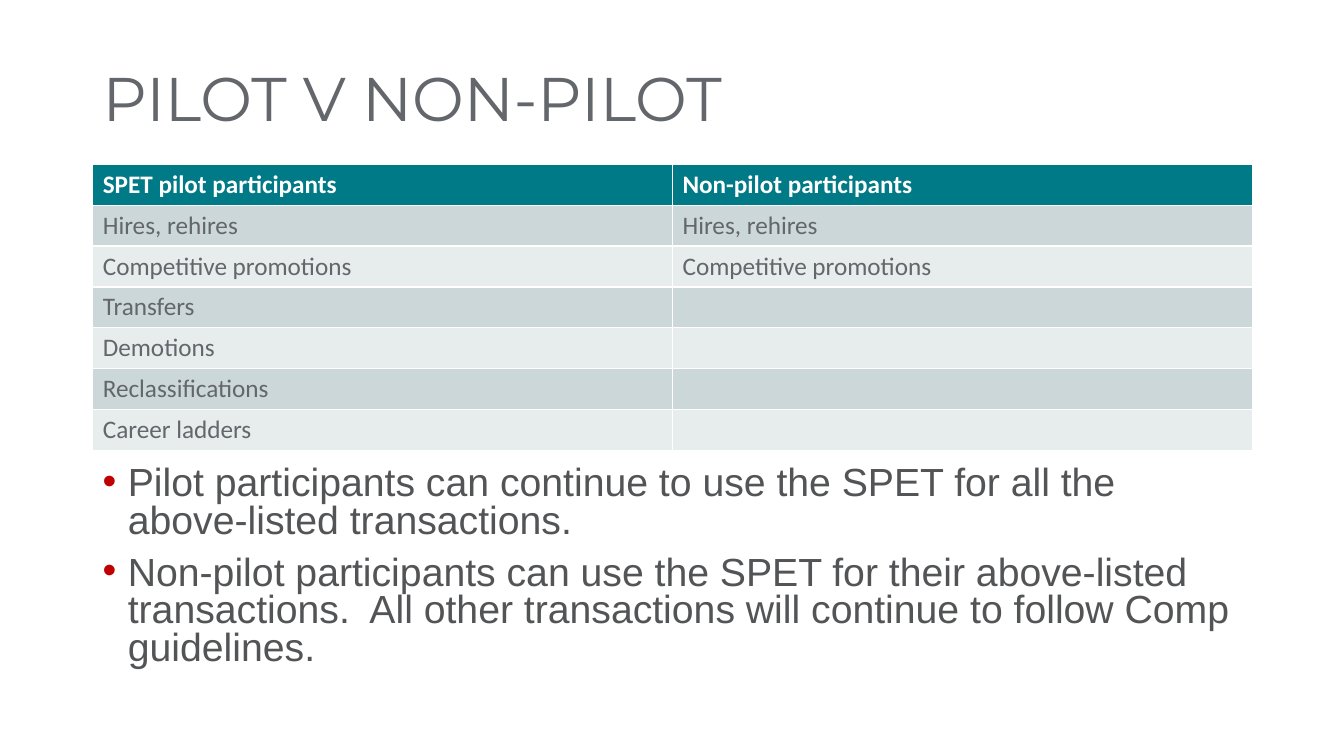
from lxml import etree
from pptx import Presentation
from pptx.dml.color import RGBColor
from pptx.enum.text import MSO_ANCHOR
from pptx.oxml.ns import qn
from pptx.util import Inches, Pt

MIDDLE = MSO_ANCHOR.MIDDLE
LEFT, WIDTH = Inches(0.92), Inches(11.5)
GREY = "63666A"


def paint(target, color):
    target.rgb = RGBColor.from_string(color)


def style(para, color, **form):
    for name, value in form.items():
        setattr(para.font, name, value)
    paint(para.font.color, color)


deck = Presentation()
deck.slide_width, deck.slide_height = Inches(13.33), Inches(7.5)
slide = deck.slides.add_slide(deck.slide_layouts[6])

title = slide.shapes.add_textbox(LEFT, Inches(0.38), WIDTH, Inches(1.25)).text_frame
title.word_wrap = True
title.vertical_anchor = MIDDLE
head = title.paragraphs[0]
head.text = "PILOT V NON-PILOT"
head.line_spacing = 0.9
style(head, GREY, name="Montserrat", size=Pt(44))

rows = [
    ("SPET pilot participants", "Non-pilot participants"),
    ("Hires, rehires", "Hires, rehires"),
    ("Competitive promotions", "Competitive promotions"),
    ("Transfers", ""),
    ("Demotions", ""),
    ("Reclassifications", ""),
    ("Career ladders", ""),
]
table = slide.shapes.add_table(len(rows), 2, LEFT, Inches(1.63), WIDTH, Inches(2.84)).table
for r, row in enumerate(rows):
    top = r == 0
    fill = "007A86" if top else ("E7ECED", "CCD7D9")[r % 2]
    for c, text in enumerate(row):
        cell = table.cell(r, c)
        cell.fill.solid()
        paint(cell.fill.fore_color, fill)
        para = cell.text_frame.paragraphs[0]
        para.text = text
        style(para, "FFFFFF" if top else GREY, name="Calibri", size=Pt(18), bold=top)

notes = [
    "Pilot participants can continue to use the SPET for all the above-listed transactions.",
    "Non-pilot participants can use the SPET for their above-listed transactions.  "
    "All other transactions will continue to follow Comp guidelines.",
]
body = slide.shapes.add_textbox(LEFT, Inches(4.58), WIDTH, Inches(2.17)).text_frame
body.word_wrap = True
for i, text in enumerate(notes):
    para = body.add_paragraph() if i else body.paragraphs[0]
    para.text = text
    para.line_spacing = 0.8
    para.space_before = Pt(10 if i else 0)
    props = para._p.get_or_add_pPr()
    props.set("marL", str(Inches(0.25)))
    props.set("indent", str(-Inches(0.25)))
    tint = etree.SubElement(props, qn("a:buClr"))
    etree.SubElement(tint, qn("a:srgbClr"), val="C00000")
    etree.SubElement(props, qn("a:buFont"), typeface="Arial")
    etree.SubElement(props, qn("a:buChar"), char="•")
    style(para, "535456", name="Arial", size=Pt(28))

deck.save("out.pptx")
